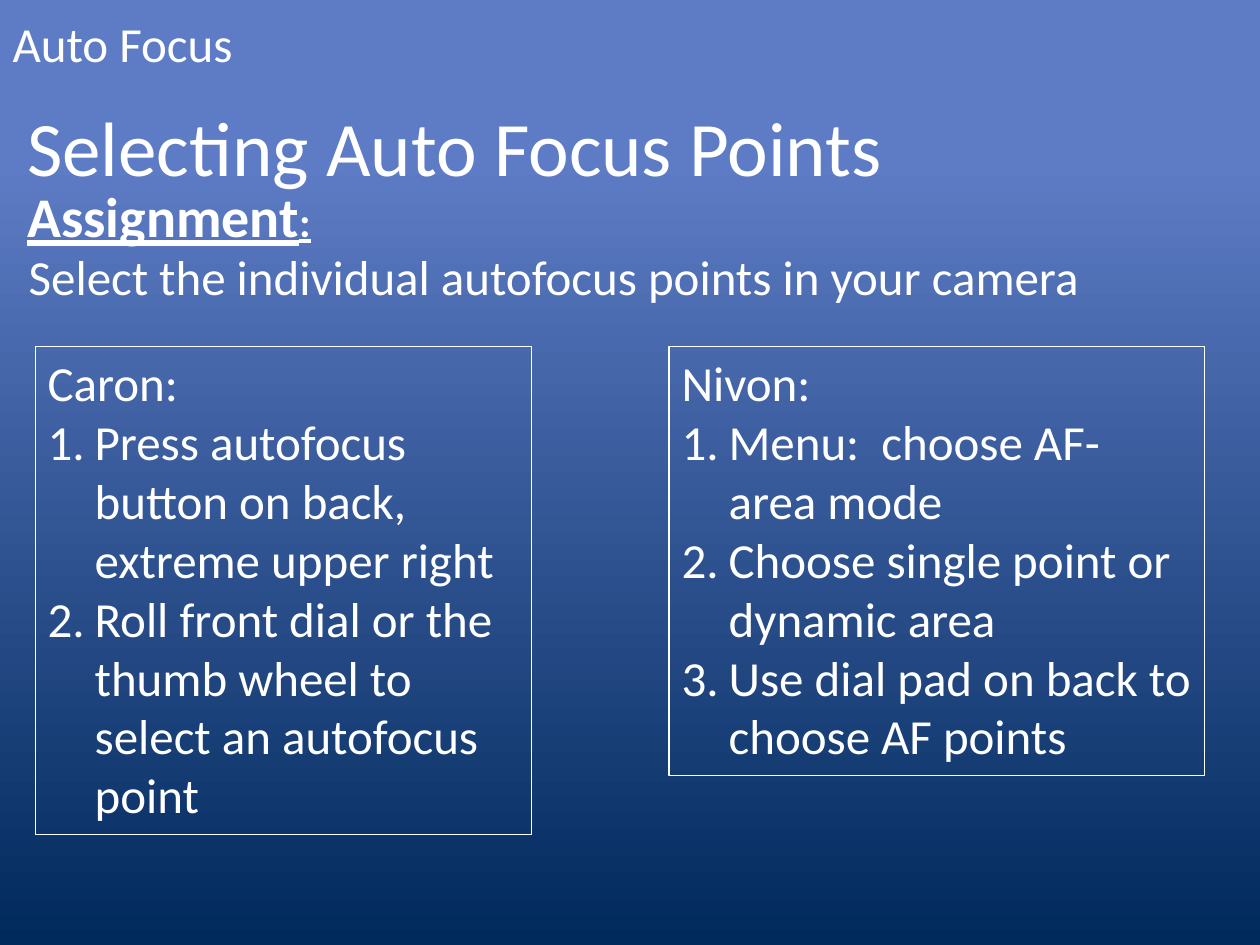
import pptx
import pptx.util
import pptx.dml.color
import pptx.enum.shapes
import pptx.enum.text
import lxml.etree
from pptx.util import Cm, Pt
from pptx.enum.text import MSO_ANCHOR, MSO_AUTO_SIZE, PP_ALIGN

# Content
TITLE = "Auto Focus"
WHITE = "FFFFFF"
GRADIENT = [(0.17, "5E7CC5"), (1, "00295C")]
BASE = {"name": "Calibri", "size": Pt(28)}

# left, top, width, height in cm, then runs of text and format
LINES = [
    ((0.3, 1.88, 23.6, 2.13), [("Selecting Auto Focus Points", {"size": Pt(44)})]),
    ((0.33, 4.85, 23.6, 1.45),
     [("Select the individual autofocus points in your camera", {})]),
    ((0.3, 3.53, 12.6, 1.63),
     [("Assignment", {"size": Pt(32), "bold": True, "underline": True}),
      (":", {"size": Pt(24), "bold": True, "underline": True})]),
]
CAMERAS = [
    ((0.71, 6.99, 10.01, 9.83), "Caron:",
     ["Press autofocus button on back, extreme upper right",
      "Roll front dial or the thumb wheel to select an autofocus point"]),
    ((13.49, 6.99, 10.8, 8.64), "Nivon:",
     ["Menu:  choose AF- area mode",
      "Choose single point or dynamic area",
      "Use dial pad on back to choose AF points"]),
]


def color(value):
    return pptx.dml.color.RGBColor.from_string(value)


def add_run(p, text, fmt):
    r = p.add_run()
    r.text = text
    for key, value in {**BASE, **fmt}.items():
        setattr(r.font, key, value)
    r.font.color.rgb = color(WHITE)


def set_frame(tf, anchor=MSO_ANCHOR.TOP, size=MSO_AUTO_SIZE.SHAPE_TO_FIT_TEXT):
    tf.word_wrap = True
    tf.vertical_anchor = anchor
    tf.auto_size = size


def number(p):
    pPr = p._p.get_or_add_pPr()
    pPr.set("marL", str(Cm(0.95)))
    pPr.set("indent", str(-Cm(0.95)))
    bu = lxml.etree.SubElement(pPr, pptx.oxml.ns.qn("a:buAutoNum"))
    bu.set("type", "arabicPeriod")


prs = pptx.Presentation()
prs.slide_width, prs.slide_height = Cm(25.4), Cm(19.05)
s = prs.slides.add_slide(prs.slide_layouts[5])

# Background, light at the top
fill = s.background.fill
fill.gradient()
fill.gradient_angle = 270
for stop, (position, value) in zip(fill.gradient_stops, GRADIENT):
    stop.position = position
    stop.color.rgb = color(value)

# Title
sp = s.shapes.title
sp.left, sp.top, sp.width, sp.height = Cm(0), Cm(0), Cm(7.7), Cm(1.73)
set_frame(sp.text_frame, MSO_ANCHOR.MIDDLE, MSO_AUTO_SIZE.NONE)
p = sp.text_frame.paragraphs[0]
p.alignment = PP_ALIGN.LEFT
add_run(p, TITLE, {})

# Heading and assignment
for box, runs in LINES:
    tf = s.shapes.add_textbox(*map(Cm, box)).text_frame
    set_frame(tf)
    for text, fmt in runs:
        add_run(tf.paragraphs[0], text, fmt)

# Framed steps for each camera
for box, name, steps in CAMERAS:
    sp = s.shapes.add_shape(pptx.enum.shapes.MSO_SHAPE.RECTANGLE, *map(Cm, box))
    sp.shadow.inherit = False
    sp.fill.background()
    sp.line.color.rgb = color(WHITE)
    sp.line.width = Pt(0.75)
    tf = sp.text_frame
    set_frame(tf)
    for i, text in enumerate([name] + steps):
        p = tf.add_paragraph() if i else tf.paragraphs[0]
        p.alignment = PP_ALIGN.LEFT
        if i:
            number(p)
        add_run(p, text, {})

prs.save("out.pptx")
